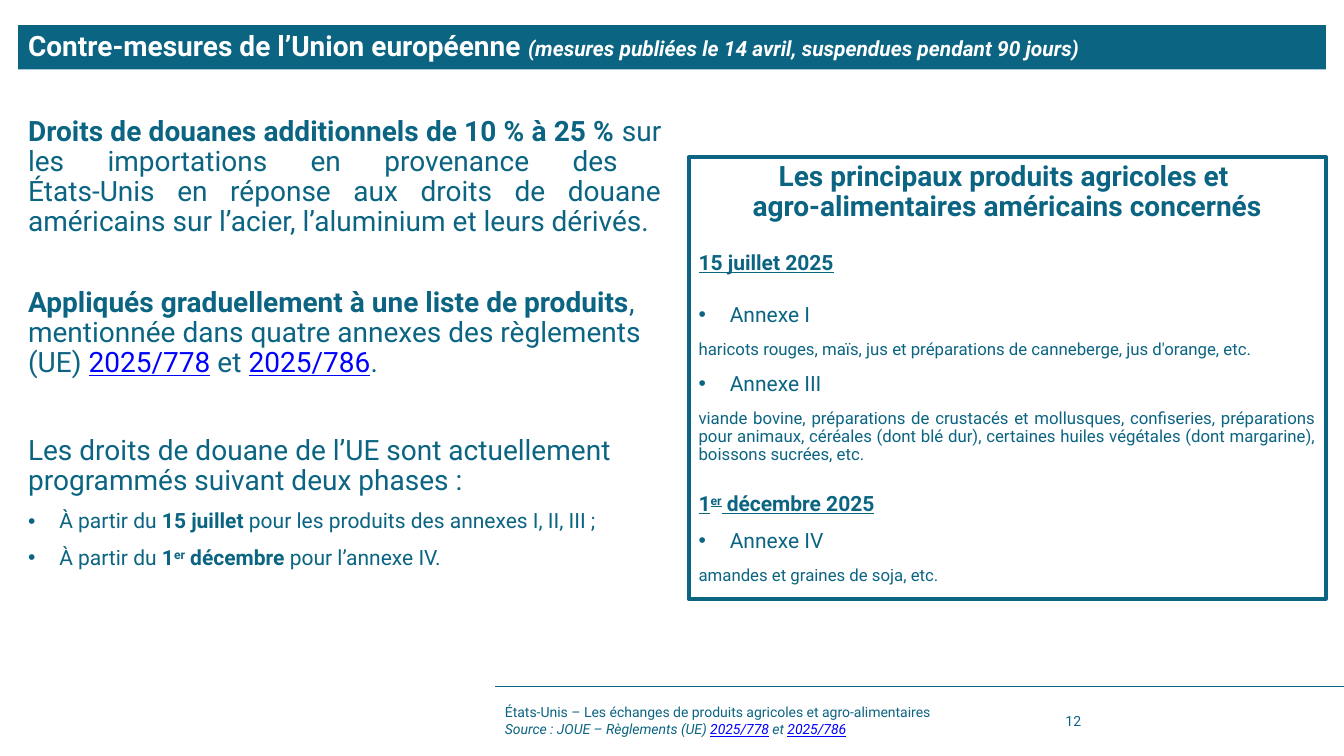
from collections import namedtuple

from lxml.etree import SubElement
from pptx import Presentation
from pptx.dml.color import RGBColor
from pptx.enum.shapes import MSO_CONNECTOR as Connector, MSO_SHAPE as Shape
from pptx.enum.text import MSO_ANCHOR as Anchor, PP_ALIGN as Align
from pptx.oxml.ns import qn
from pptx.util import Inches, Pt

Paragraph = namedtuple(
    "Paragraph", "pieces size before align bullet", defaults=(20, 10, Align.LEFT, False)
)


def rgb(value):
    return RGBColor.from_string(value)


class Deck:
    font = "Roboto"
    main = "0B6482"
    white = "FFFFFF"
    link = "0000FF"
    indent = Inches(0.31)

    def __init__(self):
        self.presentation = Presentation()
        self.presentation.slide_width = Inches(13.33)
        self.presentation.slide_height = Inches(7.5)
        self.slide = self.presentation.slides.add_slide(self.presentation.slide_layouts[6])

    def x(self, percent):
        return round(self.presentation.slide_width * percent / 100)

    def y(self, percent):
        return round(self.presentation.slide_height * percent / 100)

    def area(self, left, top, width, height):
        return self.x(left), self.y(top), self.x(width), self.y(height)

    def rule(self, left, right, top):
        line = self.slide.shapes.add_connector(
            Connector.STRAIGHT, self.x(left), self.y(top), self.x(right), self.y(top)
        )
        line.line.color.rgb = rgb(self.main)
        line.line.width = Pt(0.5)
        SubElement(line._element.spPr, qn("a:effectLst"))

    def text(self, area, paragraphs, anchor=Anchor.TOP, spacing=0.9):
        box = self.slide.shapes.add_textbox(*self.area(*area))
        self.fill_text(box, paragraphs, anchor, spacing)

    def band(self, area, paragraphs):
        shape = self.rectangle(area)
        shape.fill.solid()
        shape.fill.fore_color.rgb = rgb(self.main)
        shape.line.fill.background()
        self.fill_text(shape, paragraphs, Anchor.MIDDLE, color=self.white)

    def frame(self, area, paragraphs):
        shape = self.rectangle(area)
        shape.fill.background()
        shape.line.color.rgb = rgb(self.main)
        shape.line.width = Pt(3)
        self.fill_text(shape, paragraphs, Anchor.TOP)

    def rectangle(self, area):
        shape = self.slide.shapes.add_shape(Shape.RECTANGLE, *self.area(*area))
        shape.shadow.inherit = False
        return shape

    def fill_text(self, shape, paragraphs, anchor, spacing=0.9, color=main):
        text_frame = shape.text_frame
        text_frame.word_wrap = True
        text_frame.vertical_anchor = anchor
        for index, content in enumerate(paragraphs):
            paragraph = text_frame.add_paragraph() if index else text_frame.paragraphs[0]
            if content.bullet:
                self.add_bullet(paragraph)
            paragraph.alignment = content.align
            paragraph.line_spacing = spacing
            paragraph.space_before = Pt(content.before if index else 0)
            for text, marks, *size in content.pieces:
                for number, part in enumerate(text.split("\n")):
                    if number:
                        paragraph.add_line_break()
                    run = paragraph.add_run()
                    run.text = part
                    self.style_run(run, marks, size[0] if size else content.size, color)

    def style_run(self, run, marks, size, color):
        font = run.font
        font.name = self.font
        font.size = Pt(size)
        font.bold = "b" in marks
        font.italic = "i" in marks
        font.underline = "u" in marks or "l" in marks
        font.color.rgb = rgb(self.link if "l" in marks else color)
        if "s" in marks:
            run._r.get_or_add_rPr().set("baseline", "30000")

    def add_bullet(self, paragraph):
        properties = paragraph._p.get_or_add_pPr()
        properties.set("marL", str(self.indent))
        properties.set("indent", str(-self.indent))
        SubElement(properties, qn("a:buFont"), typeface="Arial")
        SubElement(properties, qn("a:buChar"), char="•")


def annex(name):
    return Paragraph([(name, "")], 15, bullet=True)


def products(names, align=Align.LEFT):
    return Paragraph([(names, "")], 12, align=align)


def regulations(marks):
    return [("2025/778", "l" + marks), (" et ", marks), ("2025/786", "l" + marks)]


def main():
    deck = Deck()
    margin, right_edge = 1.35, 98.65
    footer_left, footer_top, footer_height = 36.83, 92.67, 5.33
    frame_left = 51.24

    deck.rule(footer_left, 100, 90.8)
    deck.text(
        (footer_left, footer_top, 40.74, footer_height),
        [
            Paragraph([("États-Unis – Les échanges de produits agricoles et agro-alimentaires", "")], 10, 0),
            Paragraph([("Source : JOUE – Règlements (UE) ", "i")] + regulations("i"), 10, 0),
        ],
        Anchor.MIDDLE,
        1,
    )
    deck.text(
        (78.54, footer_top, 7.43, footer_height), [Paragraph([("12", "")], 10)], Anchor.MIDDLE, 1
    )
    deck.band(
        (margin, 3.33, right_edge - margin, 5.87),
        [Paragraph([
            ("Contre-mesures de l’Union européenne ", "b"),
            ("(mesures publiées le 14 avril, suspendues pendant 90 jours)", "bi", 15),
        ])],
    )
    deck.text(
        (margin, 14.8, 48.6, 70.27),
        [
            Paragraph([
                ("Droits de douanes additionnels de 10 % à 25 % ", "b"),
                ("sur les importations en provenance des \nÉtats-Unis en réponse aux droits de douane "
                 "américains sur l’acier, l’aluminium et leurs dérivés.", ""),
            ], align=Align.JUSTIFY),
            Paragraph([
                ("Appliqués graduellement à une liste de produits", "b"),
                (", mentionnée dans quatre annexes des règlements (UE) ", ""),
                *regulations(""),
                (".", ""),
            ], before=36),
            Paragraph([
                ("Les droits de douane de l’UE sont actuellement programmés suivant deux phases :", ""),
            ], before=41),
            Paragraph([
                ("À partir du ", ""),
                ("15 juillet ", "b"),
                ("pour les produits des annexes I, II, III ;", ""),
            ], 15, bullet=True),
            Paragraph([
                ("À partir du ", ""),
                ("1", "b"),
                ("er", "bs"),
                (" décembre ", "b"),
                ("pour l’annexe IV.", ""),
            ], 15, bullet=True),
        ],
    )
    deck.frame(
        (frame_left, 20.8, right_edge - frame_left, 58.4),
        [
            Paragraph([
                ("Les principaux produits agricoles et \nagro-alimentaires américains concernés", "b"),
            ], align=Align.CENTER),
            Paragraph([("15 juillet 2025", "bu")], 15, 21),
            annex("Annexe I")._replace(before=21),
            products("haricots rouges, maïs, jus et préparations de canneberge, jus d'orange, etc."),
            annex("Annexe III"),
            products(
                "viande bovine, préparations de crustacés et mollusques, confiseries, préparations "
                "pour animaux, céréales (dont blé dur), certaines huiles végétales (dont margarine), "
                "boissons sucrées, etc.",
                Align.JUSTIFY,
            ),
            Paragraph([("1", "bu"), ("er", "bus"), (" décembre 2025", "bu")], 15, 21),
            annex("Annexe IV"),
            products("amandes et graines de soja, etc."),
        ],
    )
    deck.presentation.save("out.pptx")


if __name__ == "__main__":
    main()
